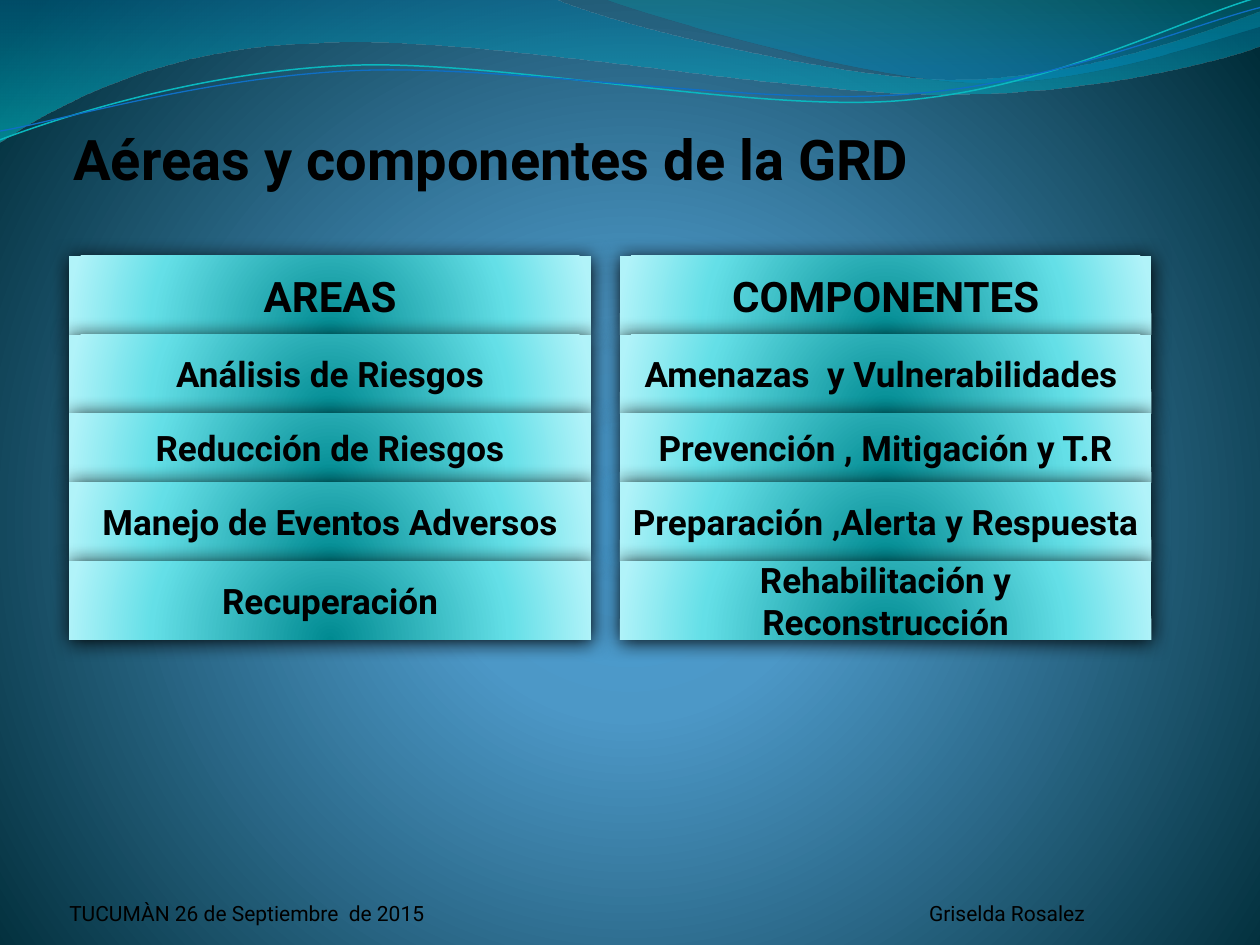
import pptx
import pptx.dml.color
import pptx.enum.shapes
import pptx.enum.text
import pptx.oxml
import pptx.oxml.ns
import pptx.util

Pt = pptx.util.Pt
RGBColor = pptx.dml.color.RGBColor
ALIGN = pptx.enum.text.PP_ALIGN
ANCHOR = pptx.enum.text.MSO_ANCHOR
qn = pptx.oxml.ns.qn
A_NS = pptx.oxml.ns.nsdecls("a")

TITLE = "Aéreas y componentes de la GRD"
FOOTER = ("TUCUMÀN 26 de Septiembre  de 2015", "Griselda Rosalez")
ROWS = [
    ("AREAS", "COMPONENTES"),
    ("Análisis de Riesgos", "Amenazas  y Vulnerabilidades "),
    ("Reducción de Riesgos", "Prevención , Mitigación y T.R"),
    ("Manejo de Eventos Adversos", "Preparación ,Alerta y Respuesta"),
    ("Recuperación", "Rehabilitación y Reconstrucción"),
]
COLUMNS = [(39.6, 298.1), (354.2, 303.8)]  # left, width
ROW_HEIGHTS = [45, 45, 39.5, 45, 45]
TABLE_TOP = 146.2

FONT = "Roboto"
BLACK = RGBColor(0x00, 0x00, 0x00)
TEAL_LINE = RGBColor(0x0A, 0xB8, 0xBF)
BLUE_LINE = RGBColor(0x0F, 0x6F, 0xC6)
SHADOW_BLUR, SHADOW_DISTANCE, SHADOW_OPACITY = 11.5, 1, 95

# Gradient stops: position %, colour, opacity %
BACKGROUND_STOPS = [(0, RGBColor(0x4A, 0xA0, 0xD6), 100),
                    (25, RGBColor(0x4C, 0x98, 0xC7), 100),
                    (100, RGBColor(0x00, 0x2C, 0x38), 100)]
CELL_STOPS = [(0, RGBColor(0x00, 0x8A, 0x91), 100),
              (68, RGBColor(0x64, 0xDF, 0xE7), 100),
              (100, RGBColor(0xB1, 0xF3, 0xF9), 100)]
WIDE_WAVE_STOPS = [(0, RGBColor(0x00, 0x74, 0xA1), 45),
                   (100, RGBColor(0x00, 0xC6, 0xCF), 55)]
RIGHT_WAVE_STOPS = [(0, RGBColor(0x00, 0xA1, 0xA9), 30),
                    (80, RGBColor(0x00, 0x8B, 0xBF), 45)]

# Each outline is a start point, then lines (x, y) and Bézier curves (six numbers)
WAVES = [
    (WIDE_WAVE_STOPS, (0, 0), [
        (316.8, -0.7),
        (342.7, 12.2, 478.1, 45.4, 545.8, 45.4),
        (614.2, 45.4, 689.8, 18.7, 720, 6.5),
        (720.7, 25.9),
        (707.8, 31.7, 626.4, 54.7, 537.1, 54),
        (447.8, 54, 275, 20.2, 185, 24.5),
        (92.9, 25.9, 33.1, 59.8, -0.7, 81.4)]),
    (RIGHT_WAVE_STOPS, (344.9, -0.7), [
        (366.5, 7.9, 491, 44.6, 553.7, 46.8),
        (616.3, 49.7, 691.9, 23, 720, 15.1),
        (720, 0)]),
]
WAVE_LINES = [
    (TEAL_LINE, 0.85, (0, 79.9), [
        (34.6, 67, 113.8, 41, 199.4, 37.4),
        (284.4, 33.8, 427, 64.1, 513.4, 57.6),
        (599.8, 51.1, 675.4, 10.8, 718.6, -1.4)]),
    (BLUE_LINE, 0.75, (0, 74.9), [
        (33.8, 69.1, 118.1, 43.9, 203.8, 40.3),
        (290.2, 36.7, 429.8, 60.5, 516.2, 54),
        (601.9, 48.2, 677.5, 15.1, 720, 4.3)]),
]


def set_gradient(holder, stops, focus=None):
    """Swap the solid fill in holder for a vertical gradient, or a circular one
    around focus (left, top, right, bottom in %)."""
    stop_xml = "".join(
        f'<a:gs pos="{pos * 1000}"><a:srgbClr val="{color}">'
        f'<a:alpha val="{opacity * 1000}"/></a:srgbClr></a:gs>'
        for pos, color, opacity in stops)
    if focus:
        sides = " ".join(f'{side}="{value * 1000}"' for side, value in zip("ltrb", focus))
        direction = f'<a:path path="circle"><a:fillToRect {sides}/></a:path>'
    else:
        direction = '<a:lin ang="5400000" scaled="1"/>'
    gradient = pptx.oxml.parse_xml(
        f'<a:gradFill {A_NS} rotWithShape="1">'
        f'<a:gsLst>{stop_xml}</a:gsLst>{direction}</a:gradFill>')
    holder.replace(holder.find(qn("a:solidFill")), gradient)


def add_outline(shapes, start, segments, close):
    """Build the outline through its end points, then bend the curved segments."""
    builder = shapes.build_freeform(Pt(start[0]), Pt(start[1]))
    builder.add_line_segments([(Pt(s[-2]), Pt(s[-1])) for s in segments], close=close)
    outline = builder.convert_to_shape()
    outline.shadow.inherit = False
    steps = list(outline.element.iter(qn("a:lnTo")))
    for step, segment in zip(steps, segments):
        if len(segment) == 6:
            points = "".join(
                f'<a:pt x="{Pt(x) - outline.left}" y="{Pt(y) - outline.top}"/>'
                for x, y in zip(segment[::2], segment[1::2]))
            curve = pptx.oxml.parse_xml(f"<a:cubicBezTo {A_NS}>{points}</a:cubicBezTo>")
            step.getparent().replace(step, curve)
    return outline


def write(shape, text, size, bold, align, anchor, margins):
    frame = shape.text_frame
    left, top, right, bottom = map(Pt, margins)
    settings = {"word_wrap": True, "vertical_anchor": anchor, "margin_left": left,
                "margin_top": top, "margin_right": right, "margin_bottom": bottom}
    for name, value in settings.items():
        setattr(frame, name, value)
    paragraph = frame.paragraphs[0]
    paragraph.alignment = align
    run = paragraph.add_run()
    run.text = text
    for name, value in {"name": FONT, "size": Pt(size), "bold": bold}.items():
        setattr(run.font, name, value)
    run.font.color.rgb = BLACK
    return paragraph


def add_cell(shapes, text, left, top, width, height, size):
    cell = shapes.add_shape(pptx.enum.shapes.MSO_SHAPE.RECTANGLE,
                            Pt(left), Pt(top), Pt(width), Pt(height))
    cell.fill.solid()
    set_gradient(cell.element.spPr, CELL_STOPS, (50, 130, 50, -30))
    cell.line.fill.background()
    cell.shadow.inherit = False
    cell.element.spPr.find(qn("a:effectLst")).append(pptx.oxml.parse_xml(
        f'<a:outerShdw {A_NS} blurRad="{Pt(SHADOW_BLUR)}" dist="{Pt(SHADOW_DISTANCE)}" '
        f'dir="5400000" rotWithShape="0"><a:srgbClr val="{BLACK}">'
        f'<a:alpha val="{SHADOW_OPACITY * 1000}"/></a:srgbClr></a:outerShdw>'))
    write(cell, text, size, True, ALIGN.CENTER, ANCHOR.MIDDLE, (7.2, 3.6, 7.2, 3.6))


def main():
    deck = pptx.Presentation()
    deck.slide_width, deck.slide_height = Pt(720), Pt(540)
    slide = deck.slides.add_slide(deck.slide_layouts[6])
    shapes = slide.shapes

    slide.background.fill.solid()
    set_gradient(slide.element.find(".//" + qn("p:bgPr")),
                 BACKGROUND_STOPS, (10, 110, 10, 100))

    for stops, start, segments in WAVES:
        wave = add_outline(shapes, start, segments, close=True)
        wave.fill.solid()
        set_gradient(wave.element.spPr, stops)
        wave.line.fill.background()
    for color, width, start, segments in WAVE_LINES:
        wave_line = add_outline(shapes, start, segments, close=False)
        wave_line.fill.background()
        wave_line.line.color.rgb = color
        wave_line.line.width = Pt(width)

    title = shapes.add_textbox(Pt(41.8), Pt(67.7), Pt(618.5), Pt(438.5))
    heading = write(title, TITLE, 32, True, ALIGN.JUSTIFY, ANCHOR.TOP, (0, 3.6, 1.4, 3.6))
    heading.space_before = Pt(2.5)

    footer = shapes.add_textbox(Pt(39.6), Pt(500.4), Pt(635.8), Pt(28.8))
    credits = write(footer, "\t".join(FOOTER), 12, False, ALIGN.LEFT, ANCHOR.BOTTOM,
                    (0, 0, 0, 0))
    credits._p.get_or_add_pPr().append(pptx.oxml.parse_xml(
        f'<a:tabLst {A_NS}><a:tab pos="{Pt(491.3)}" algn="l"/></a:tabLst>'))

    for column, (left, width) in enumerate(COLUMNS):
        for index, (row, height) in enumerate(zip(ROWS, ROW_HEIGHTS)):
            top = TABLE_TOP + sum(ROW_HEIGHTS[:index])
            add_cell(shapes, row[column], left, top, width, height, 20 if index else 24)

    deck.save("out.pptx")


if __name__ == "__main__":
    main()
